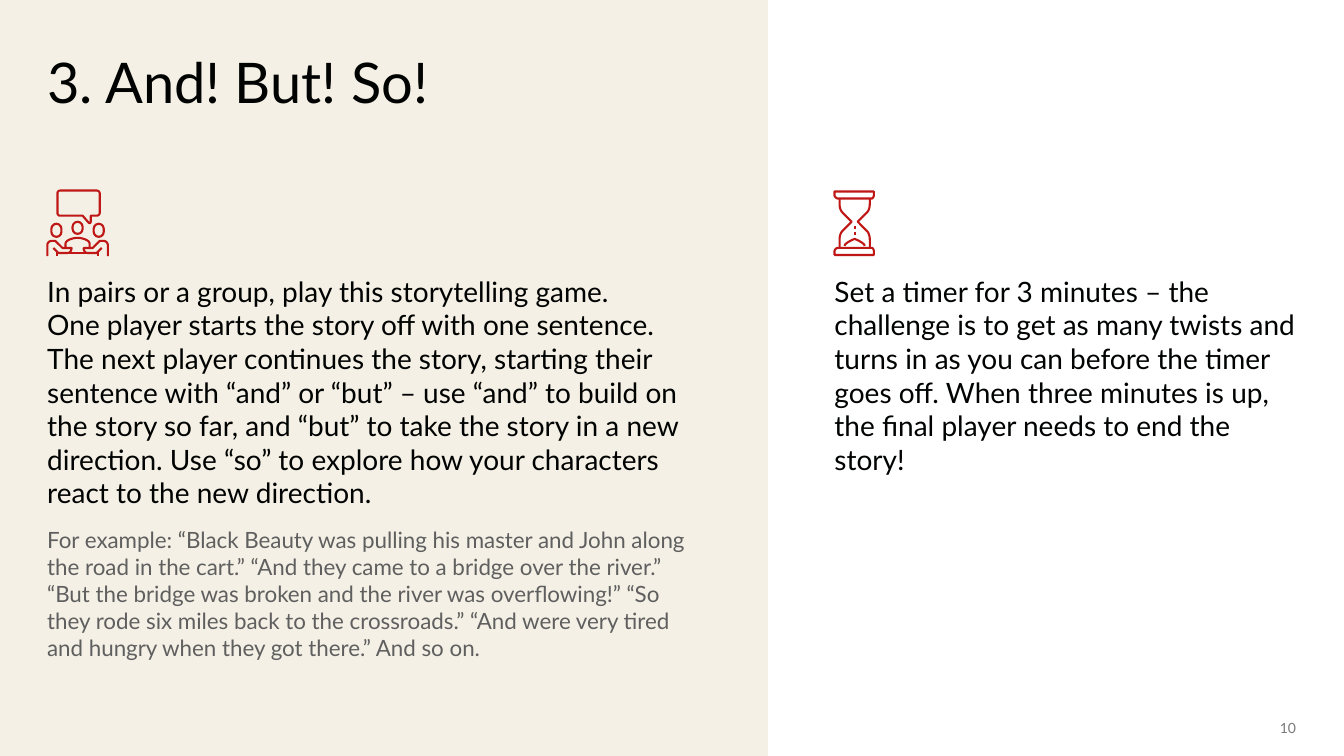
from pptx import Presentation
from pptx import util as u
from pptx.dml import color
from pptx.enum import shapes, text
from pptx.oxml import ns
from lxml import etree

FONT = "Lato"
INK, GREY, PALE_GREY = "010302", "5F5F5F", "797979"
CREAM, RED = "F4F0E5", "BF1716"
UNIT = u.Cm(0.0254)
LEFT, RIGHT, BODY_TOP = 1.19, 21.03, 6.91

SHOULDERS = "M 12 57 L 12 53 C 12 49 4 47 0 47 C -4 47 -12 49 -12 53 L -12 57"
ARM = ("M 30 65 L 30 54 C 30 52 28 50 26 50 L 22 50 L 15 57 L 6 57 "
       "C 6 57 6 62 10 62 C 13 62 19 62 19 62 L 24 57")
BUBBLE = ("M -17 0 L 19 0 C 20 0 22 1 22 3 L 22 22 C 22 24 20 25 19 25 L 13 25 "
          "L 13 31 C 13 32 12 33 11 32 L 5 25 L -17 25 C -19 25 -20 24 -20 22 "
          "L -20 3 C -20 1 -19 0 -17 0 Z")
GLASS = ("M 15 57 L 15 48 C 15 44 14 41 12 39 L 3 30 L 12 21 "
         "C 14 19 15 16 15 12 L 15 7")
CAP = "M 19 0 L -20 0 L -20 4 C -20 5 -18 7 -17 7 L 17 7 C 18 7 19 5 19 4 Z"
SAND = "M 10 54 C 10 51 0 47 0 47 C 0 47 -10 51 -10 54"

INTRO = ("In pairs or a group, play this storytelling game.\n"
         "One player starts the story off with one sentence. The next player "
         "continues the story, starting their sentence with “and” or “but” – use "
         "“and” to build on the story so far, and “but” to take the story in a new "
         "direction. Use “so” to explore how your characters react to the new "
         "direction.")
EXAMPLE = ("For example: “Black Beauty was pulling his master and John along the "
           "road in the cart.” “And they came to a bridge over the river.” “But the "
           "bridge was broken and the river was overflowing!” “So they rode six "
           "miles back to the crossroads.” “And were very tired and hungry when "
           "they got there.” And so on.")
TIMER = ("Set a timer for 3 minutes – the challenge is to get as many twists and "
         "turns in as you can before the timer goes off. When three minutes is up, "
         "the final player needs to end the story!")


def rgb(value):
    return color.RGBColor.from_string(value)


def add_panel(s, width, height):
    sp = s.shapes.add_shape(shapes.MSO_SHAPE.RECTANGLE, 0, 0, width, height)
    sp.shadow.inherit = False
    sp.fill.solid()
    sp.fill.fore_color.rgb = rgb(CREAM)
    sp.line.fill.background()


def add_text(s, box, paragraphs, align=text.PP_ALIGN.LEFT,
             anchor=text.MSO_ANCHOR.TOP, after=0):
    tf = s.shapes.add_textbox(*map(u.Cm, box)).text_frame
    tf.word_wrap = True
    tf.vertical_anchor = anchor
    tf.margin_left = tf.margin_right = tf.margin_top = tf.margin_bottom = 0
    for i, (words, size, ink) in enumerate(paragraphs):
        p = tf.add_paragraph() if i else tf.paragraphs[0]
        p.text = words
        p.alignment = align
        p.space_after = u.Pt(after)
        for r in p.runs:
            r.font.name = FONT
            r.font.size = u.Pt(size)
            r.font.color.rgb = rgb(ink)


def set_stroke(sp):
    sp.line.color.rgb = rgb(RED)
    sp.line.width = u.Pt(1.5)


def set_outline(sp):
    sp.shadow.inherit = False
    sp.fill.background()
    set_stroke(sp)


def curve(start, a, b, end, steps=8):
    for i in range(1, steps + 1):
        t = i / steps
        weights = (1 - t) ** 3, 3 * t * (1 - t) ** 2, 3 * t * t * (1 - t), t ** 3
        yield tuple(sum(w * c for w, c in zip(weights, axis))
                    for axis in zip(start, a, b, end))


def trace_points(outline):
    tokens = iter(outline.split())
    points = []
    for command in tokens:
        if command == "Z":
            continue
        pairs = [(int(next(tokens)), int(next(tokens)))
                 for _ in range(3 if command == "C" else 1)]
        points += curve(points[-1], *pairs) if command == "C" else pairs
    return points


def add_outline(icon, origin, outline, flip_x=1, flip_y=1):
    x, y = origin
    points = [((x + flip_x * px) * UNIT, (y + flip_y * py) * UNIT)
              for px, py in trace_points(outline)]
    builder = icon.shapes.build_freeform(*points[0])
    builder.add_line_segments(points[1:], close=outline.endswith("Z"))
    set_outline(builder.convert_to_shape())


def add_head(icon, origin, centre, top, height):
    x, y = origin
    sp = icon.shapes.add_shape(shapes.MSO_SHAPE.ROUNDED_RECTANGLE,
                               (x + centre - 5) * UNIT, (y + top) * UNIT,
                               10 * UNIT, height * UNIT)
    sp.adjustments[0] = 0.5
    set_outline(sp)


def add_stroke(icon, origin, x1, y1, x2, y2):
    x, y = origin
    line = icon.shapes.add_connector(
        shapes.MSO_CONNECTOR.STRAIGHT, (x + x1) * UNIT, (y + y1) * UNIT,
        (x + x2) * UNIT, (y + y2) * UNIT)
    set_stroke(line)
    etree.SubElement(line._element.spPr, ns.qn("a:effectLst"))


def add_group_icon(s, origin):
    icon = s.shapes.add_group_shape()
    add_outline(icon, origin, SHOULDERS)
    add_head(icon, origin, 0, 31, 12)
    for side in (1, -1):
        add_head(icon, origin, side * 21, 33, 13)
        add_outline(icon, origin, ARM, flip_x=side)
        add_stroke(icon, origin, side * 20, 61, side * 20, 65)
    add_stroke(icon, origin, -10, 62, 10, 62)
    add_outline(icon, origin, BUBBLE)


def add_hourglass_icon(s, origin):
    icon = s.shapes.add_group_shape()
    x, y = origin
    for side in (1, -1):
        add_outline(icon, origin, GLASS, flip_x=side)
    add_outline(icon, origin, CAP)
    add_outline(icon, (x, y + 63), CAP, flip_y=-1)
    add_outline(icon, origin, SAND)
    for top in (34, 40):
        add_stroke(icon, origin, 0, top, 0, top + 3)


def main():
    prs = Presentation()
    prs.slide_width, prs.slide_height = u.Cm(33.87), u.Cm(19.05)
    s = prs.slides.add_slide(prs.slide_layouts[6])
    add_panel(s, u.Cm(19.35), prs.slide_height)
    add_text(s, (LEFT, 1.19, 27.51, 2.36), [("3. And! But! So!", 40, INK)])
    add_text(s, (LEFT, BODY_TOP, 16.15, 9.83),
             [(INTRO, 20, INK), (EXAMPLE, 16, GREY)], after=12)
    add_text(s, (RIGHT, BODY_TOP, 11.63, 5.13), [(TIMER, 20, INK)], after=12)
    add_group_icon(s, (77, 189))
    add_hourglass_icon(s, (848, 190))
    add_text(s, (30.5, 18.14, 2.16, 0.43), [("10", 10, PALE_GREY)],
             text.PP_ALIGN.RIGHT, text.MSO_ANCHOR.MIDDLE)
    prs.save("out.pptx")


if __name__ == "__main__":
    main()
